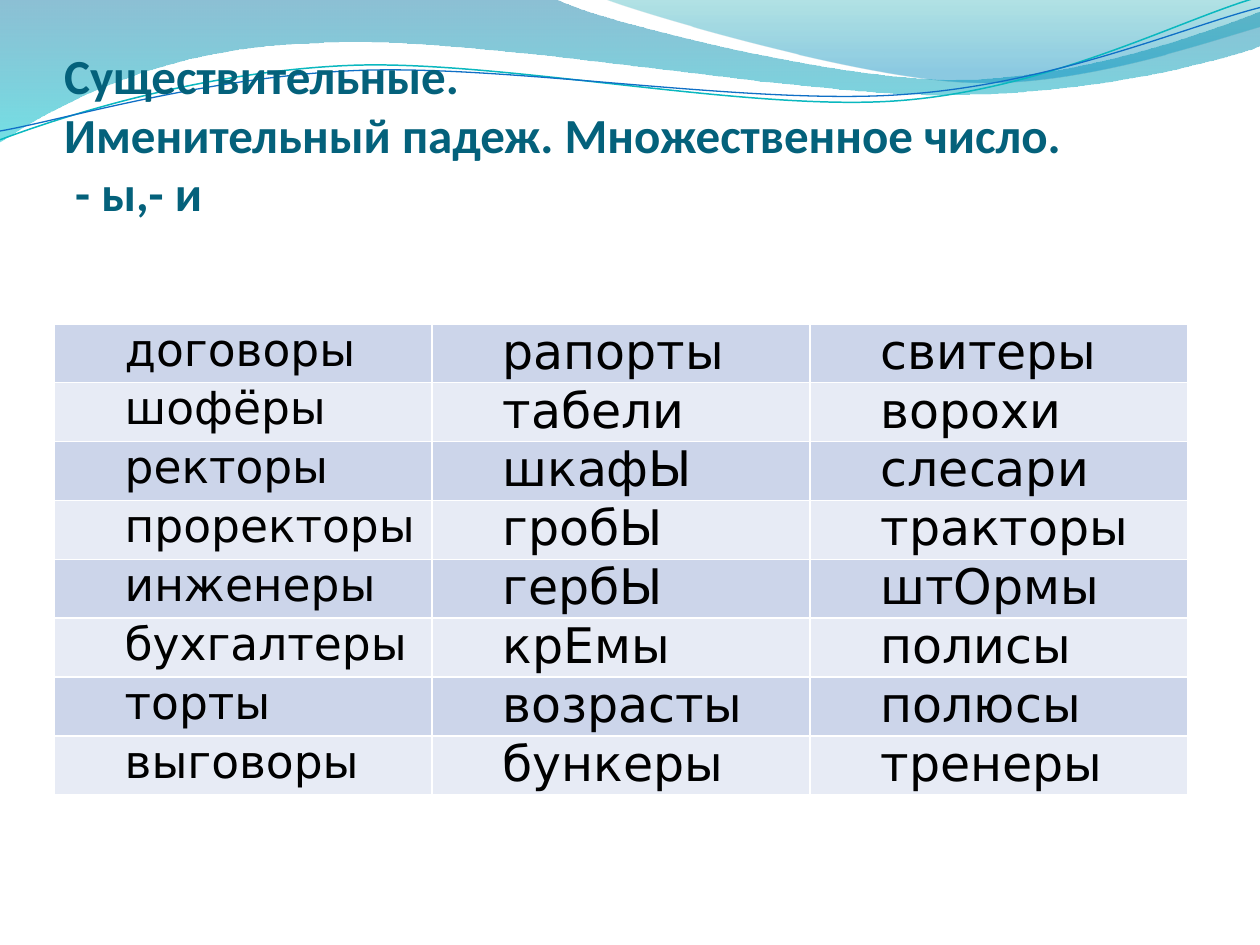
from lxml import etree
from pptx import Presentation
from pptx.dml.color import RGBColor
from pptx.enum.text import MSO_ANCHOR, PP_ALIGN
from pptx.oxml.ns import qn
from pptx.util import Inches, Pt

BOTTOM = MSO_ANCHOR.BOTTOM
JUSTIFY = PP_ALIGN.JUSTIFY

TITLE_COLOR = RGBColor(0x04, 0x61, 0x7B)
BLACK = RGBColor(0x00, 0x00, 0x00)
BANDS = (RGBColor(0xCC, 0xD5, 0xEA), RGBColor(0xE7, 0xEB, 0xF5))
TEAL_LINE = RGBColor(0x0A, 0xB8, 0xBF)
BLUE_LINE = RGBColor(0x0F, 0x6F, 0xC6)

# Each outline is a start point followed by line ends (2 numbers)
# or Bezier segments (6 numbers), in inches.
LEFT_WAVE = [
    (0, 0), (4.4, -0.01),
    (4.76, 0.17, 6.64, 0.63, 7.58, 0.63), (8.53, 0.63, 9.58, 0.26, 10, 0.09),
    (10.01, 0.36),
    (9.83, 0.44, 8.7, 0.76, 7.46, 0.75), (6.22, 0.75, 3.82, 0.28, 2.57, 0.34),
    (1.29, 0.36, 0.46, 0.83, -0.01, 1.13), (0, 0),
]
RIGHT_WAVE = [
    (4.79, -0.01),
    (5.09, 0.11, 6.82, 0.62, 7.69, 0.65), (8.56, 0.69, 9.61, 0.32, 10, 0.21),
    (10, 0), (4.79, -0.01),
]
TEAL_CURVE = [
    (0, 1.11), (0.48, 0.93, 1.58, 0.57, 2.77, 0.52),
    (3.95, 0.47, 5.93, 0.89, 7.13, 0.8), (8.33, 0.71, 9.38, 0.15, 9.98, -0.02),
]
BLUE_CURVE = [
    (0, 1.04), (0.47, 0.96, 1.64, 0.61, 2.83, 0.56),
    (4.03, 0.51, 5.97, 0.84, 7.17, 0.75), (8.36, 0.67, 9.41, 0.21, 10, 0.06),
]

# Gradient stops: position, colour, opacity in percent
LEFT_STOPS = [(0, RGBColor(0x00, 0x74, 0xA1), 45), (1, RGBColor(0x00, 0xC6, 0xCF), 55)]
RIGHT_STOPS = [(0, RGBColor(0x00, 0xA1, 0xA9), 30), (0.8, RGBColor(0x00, 0x8B, 0xBF), 45)]

TITLE_LINES = [
    "Существительные. ",
    "Именительный падеж. Множественное число.",
    " - ы,- и",
]
TITLE_FONT = {"name": "Calibri", "size": Pt(28), "bold": True}

WORDS = [
    ("договоры", "рапорты", "свитеры"),
    ("шофёры", "табели", "ворохи"),
    ("ректоры", "шкафЫ", "слесари"),
    ("проректоры", "гробЫ", "тракторы"),
    ("инженеры", "гербЫ", "штОрмы"),
    ("бухгалтеры", "крЕмы", "полисы"),
    ("торты", "возрасты", "полюсы"),
    ("выговоры", "бункеры", "тренеры"),
]
COLUMN_SIZES = (26, 28, 28)
CELL_MARGINS = {"margin_left": Inches(0.07), "margin_right": Inches(0.07),
                "margin_top": 0, "margin_bottom": 0}


def set_attrs(obj, values):
    for name, value in values.items():
        setattr(obj, name, value)


def add_outline(s, outline, close):
    """Draw the outline, joining each three points of a curve into one Bezier."""
    points = [(Inches(seg[i]), Inches(seg[i + 1]))
              for seg in outline for i in range(0, len(seg), 2)]
    builder = s.shapes.build_freeform(*points[0])
    builder.add_line_segments(points[1:], close=close)
    sp = builder.convert_to_shape()
    sp.shadow.inherit = False
    lines = iter(list(sp._element.spPr.iter(qn("a:lnTo"))))
    for seg in outline[1:]:
        first = next(lines)
        if len(seg) == 6:
            curve = etree.Element(qn("a:cubicBezTo"))
            first.addprevious(curve)
            for line in (first, next(lines), next(lines)):
                curve.append(line[0])
                line.getparent().remove(line)
    return sp


def add_wave(s, outline, stops):
    sp = add_outline(s, outline, close=True)
    sp.line.fill.background()
    sp.fill.gradient()
    sp.fill.gradient_angle = 270
    for stop, (position, color, _) in zip(sp.fill.gradient_stops, stops):
        stop.position = position
        stop.color.rgb = color
    colors = list(sp._element.spPr.iter(qn("a:srgbClr")))
    for clr, (_, _, opacity) in zip(colors, stops):
        etree.SubElement(clr, qn("a:alpha"), val=str(opacity * 1000))


def add_curve(s, outline, color, width):
    sp = add_outline(s, outline, close=False)
    sp.fill.background()
    sp.line.color.rgb = color
    sp.line.width = Pt(width)


def add_title(s):
    tf = s.shapes.add_textbox(Inches(0.51), Inches(0.68), Inches(9), Inches(1.08)).text_frame
    set_attrs(tf, {"word_wrap": True, "vertical_anchor": BOTTOM, "margin_left": 0,
                   "margin_right": 0, "margin_top": Inches(0.05), "margin_bottom": 0})
    p = tf.paragraphs[0]
    for i, line in enumerate(TITLE_LINES):
        if i:
            p.add_line_break()
        r = p.add_run()
        r.text = line
        set_attrs(r.font, TITLE_FONT)
        r.font.color.rgb = TITLE_COLOR


def fill_cell(cell, word, size, color):
    set_attrs(cell, CELL_MARGINS)
    cell.fill.solid()
    cell.fill.fore_color.rgb = color
    p = cell.text_frame.paragraphs[0]
    p.alignment = JUSTIFY
    pPr = p._p.get_or_add_pPr()
    pPr.set("marL", "0")
    pPr.set("indent", str(Inches(0.49)))
    r = p.add_run()
    r.text = word
    set_attrs(r.font, {"name": "DejaVu Sans", "size": Pt(size)})
    r.font.color.rgb = BLACK


def add_word_table(s):
    """Add the table; its default style supplies the thin white borders."""
    row_height = Inches(0.41)
    table = s.shapes.add_table(len(WORDS), len(COLUMN_SIZES), Inches(0.43), Inches(2.57),
                               Inches(9), row_height * len(WORDS)).table
    set_attrs(table, {"first_row": False, "horz_banding": True})
    for i, words in enumerate(WORDS):
        for j, (word, size) in enumerate(zip(words, COLUMN_SIZES)):
            fill_cell(table.cell(i, j), word, size, BANDS[i % 2])


def main():
    prs = Presentation()
    prs.slide_width, prs.slide_height = Inches(10), Inches(7.5)
    s = prs.slides.add_slide(prs.slide_layouts[6])
    add_wave(s, LEFT_WAVE, LEFT_STOPS)
    add_wave(s, RIGHT_WAVE, RIGHT_STOPS)
    add_curve(s, TEAL_CURVE, TEAL_LINE, 0.85)
    add_curve(s, BLUE_CURVE, BLUE_LINE, 0.75)
    add_title(s)
    add_word_table(s)
    prs.save("out.pptx")


if __name__ == "__main__":
    main()
